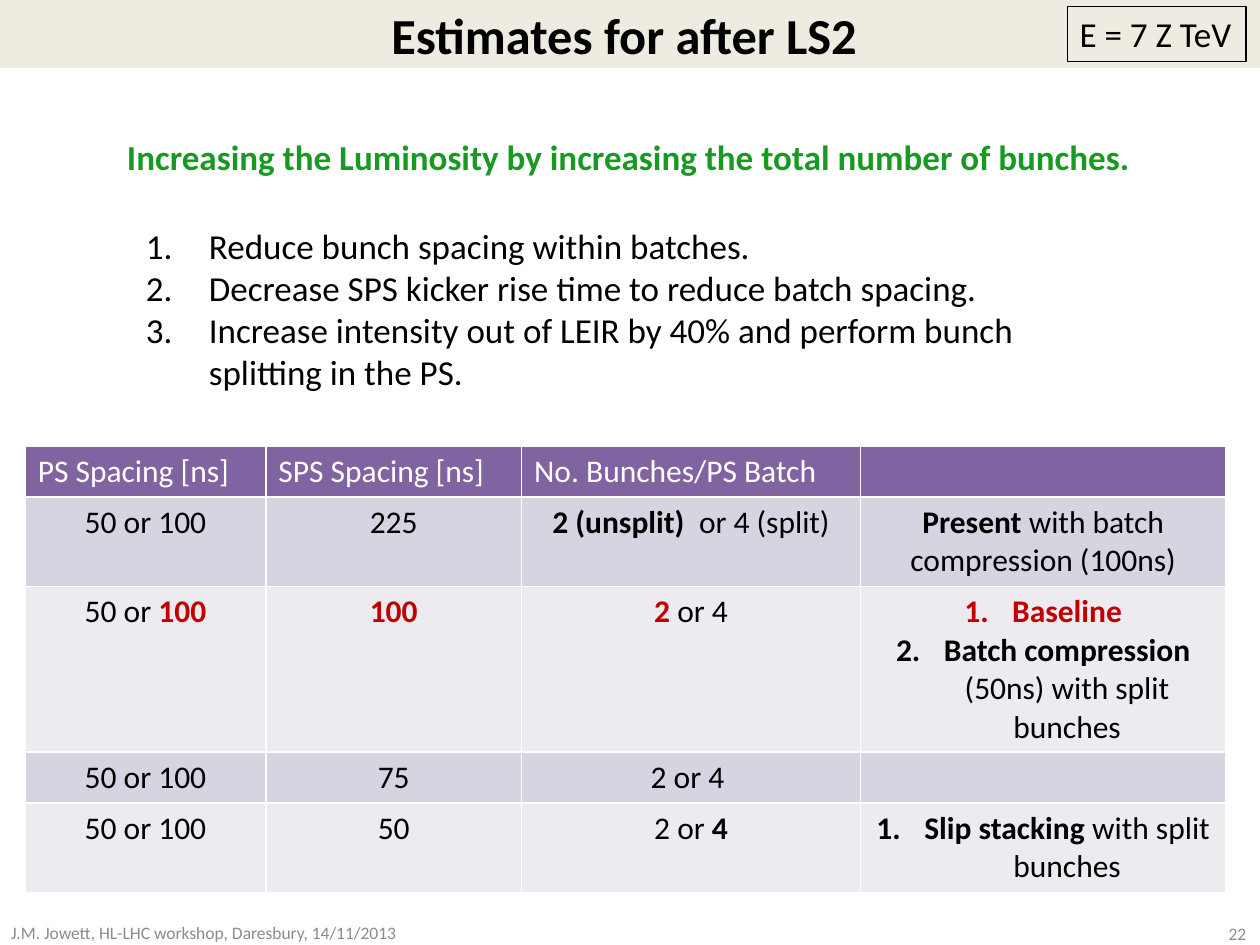
"""Build the slide on luminosity estimates after LS2."""
from pptx import Presentation
from pptx import util as u
from pptx.dml.color import RGBColor
from pptx.enum import shapes, text
from pptx.oxml.xmlchemy import OxmlElement

BLACK = RGBColor(0x00, 0x00, 0x00)
WHITE = RGBColor(0xFF, 0xFF, 0xFF)
GREY = RGBColor(0x8C, 0x8C, 0x8C)
BEIGE = RGBColor(0xEE, 0xEC, 0xE1)
GREEN = RGBColor(0x17, 0x99, 0x23)
RED = RGBColor(0xC0, 0x00, 0x00)
PURPLE = RGBColor(0x80, 0x64, 0xA2)
BANDS = [RGBColor(0xED, 0xEA, 0xF0), RGBColor(0xD8, 0xD3, 0xE0)]
LEFT, CENTER, RIGHT = text.PP_ALIGN.LEFT, text.PP_ALIGN.CENTER, text.PP_ALIGN.RIGHT
MIDDLE, TOP = text.MSO_ANCHOR.MIDDLE, text.MSO_ANCHOR.TOP

deck = Presentation()
deck.slide_width, deck.slide_height = u.Inches(10), u.Inches(7.5)
page = deck.slides.add_slide(deck.slide_layouts[5])
UNIT = deck.slide_width // 100


def grid(*cells):
    """Turn grid cells, each a hundredth of the slide's width, into lengths."""
    return [round(cell * UNIT) for cell in cells]


def write(frame, *lines, size=20, color=BLACK, bold=False, align=LEFT, anchor=TOP, indent=0):
    """Write lines, each a string or a list of (text, bold, color) runs."""
    frame.word_wrap = True
    frame.vertical_anchor = anchor
    for index, line in enumerate(lines):
        para = frame.paragraphs[0] if index == 0 else frame.add_paragraph()
        para.alignment = align
        if indent:
            props = para._p.get_or_add_pPr()
            props.set("marL", str(u.Inches(indent)))
            props.set("indent", str(-u.Inches(indent)))
            number = OxmlElement("a:buAutoNum")
            number.set("type", "arabicPeriod")
            props.append(number)
        for words, strong, tint in [(line, bold, color)] if isinstance(line, str) else line:
            span = para.add_run()
            span.text = words
            span.font.name = "Calibri"
            span.font.size = u.Pt(size)
            span.font.bold = strong
            span.font.color.rgb = tint


title = page.shapes.title
title.left, title.top, title.width, title.height = grid(0, 0, 100, 5.4)
title.fill.solid()
title.fill.fore_color.rgb = BEIGE
title.text_frame.auto_size = text.MSO_AUTO_SIZE.NONE
write(title.text_frame, "Estimates for after LS2 ", size=28.8, bold=True, align=CENTER, anchor=MIDDLE)

energy = page.shapes.add_shape(shapes.MSO_SHAPE.RECTANGLE, *grid(84.7, 0.5, 14.2, 4.4))
energy.shadow.inherit = False
energy.fill.background()
energy.line.color.rgb = BLACK
energy.line.width = u.Pt(0.75)
write(energy.text_frame, "E = 7 Z TeV")
energy.text_frame.word_wrap = False

boxes = [
    ((9.1, 10.3, 82.7, 4.4), ["Increasing the Luminosity by increasing the total number of bunches."],
     dict(color=GREEN, bold=True)),
    ((10.6, 17.3, 78, 14.4),
     ["Reduce bunch spacing within batches.",
      "Decrease SPS kicker rise time to reduce batch spacing.",
      "Increase intensity out of LEIR by 40% and perform bunch splitting in the PS."],
     dict(indent=0.5)),
    ((-0.1, 72.9, 34.3, 2.3), ["J.M. Jowett, HL-LHC workshop, Daresbury, 14/11/2013"],
     dict(size=10, color=GREY, anchor=MIDDLE)),
    ((76.6, 72.9, 23.3, 2.4), ["22"], dict(size=10, color=GREY, align=RIGHT, anchor=MIDDLE)),
]
for place, lines, style in boxes:
    write(page.shapes.add_textbox(*grid(*place)).text_frame, *lines, **style)

rows = [
    [["PS Spacing [ns]"], ["SPS Spacing [ns]"], ["No. Bunches/PS Batch"], []],
    [["50 or 100"], ["225"],
     [[("2 (unsplit)  ", True, BLACK), ("or 4 (split)", False, BLACK)]],
     [[("Present", True, BLACK), (" with batch compression (100ns)", False, BLACK)]]],
    [[[("50 or ", False, BLACK), ("100", True, RED)]],
     [[("100", True, RED)]],
     [[("2 ", True, RED), ("or 4", False, BLACK)]],
     [[("Baseline", True, RED)],
      [("Batch compression ", True, BLACK), ("(50ns) with split bunches", False, BLACK)]]],
    [["50 or 100"], ["75"], ["2 or 4 "], []],
    [["50 or 100"], ["50"],
     [[("2 or ", False, BLACK), ("4", True, BLACK)]],
     [[("Slip stacking ", True, BLACK), ("with split bunches", False, BLACK)]]],
]
widths = grid(19.1, 20.3, 26.9, 29)
heights = grid(4.05, 7.1, 13.15, 4.05, 7.1)
table = page.shapes.add_table(len(rows), len(widths), *grid(2, 35.4), sum(widths), sum(heights)).table
for column, width in zip(table.columns, widths):
    column.width = width
for r, row in enumerate(rows):
    table.rows[r].height = heights[r]
    for c, lines in enumerate(row):
        cell = table.cell(r, c)
        cell.fill.solid()
        cell.fill.fore_color.rgb = BANDS[r % 2] if r else PURPLE
        numbered = c == 3 and r in (2, 4)
        write(cell.text_frame, *lines, size=18, color=BLACK if r else WHITE,
              align=CENTER if r else LEFT, indent=0.38 if numbered else 0)
        if not lines:
            cell.text_frame.paragraphs[0].font.size = u.Pt(18)

deck.save("out.pptx")
